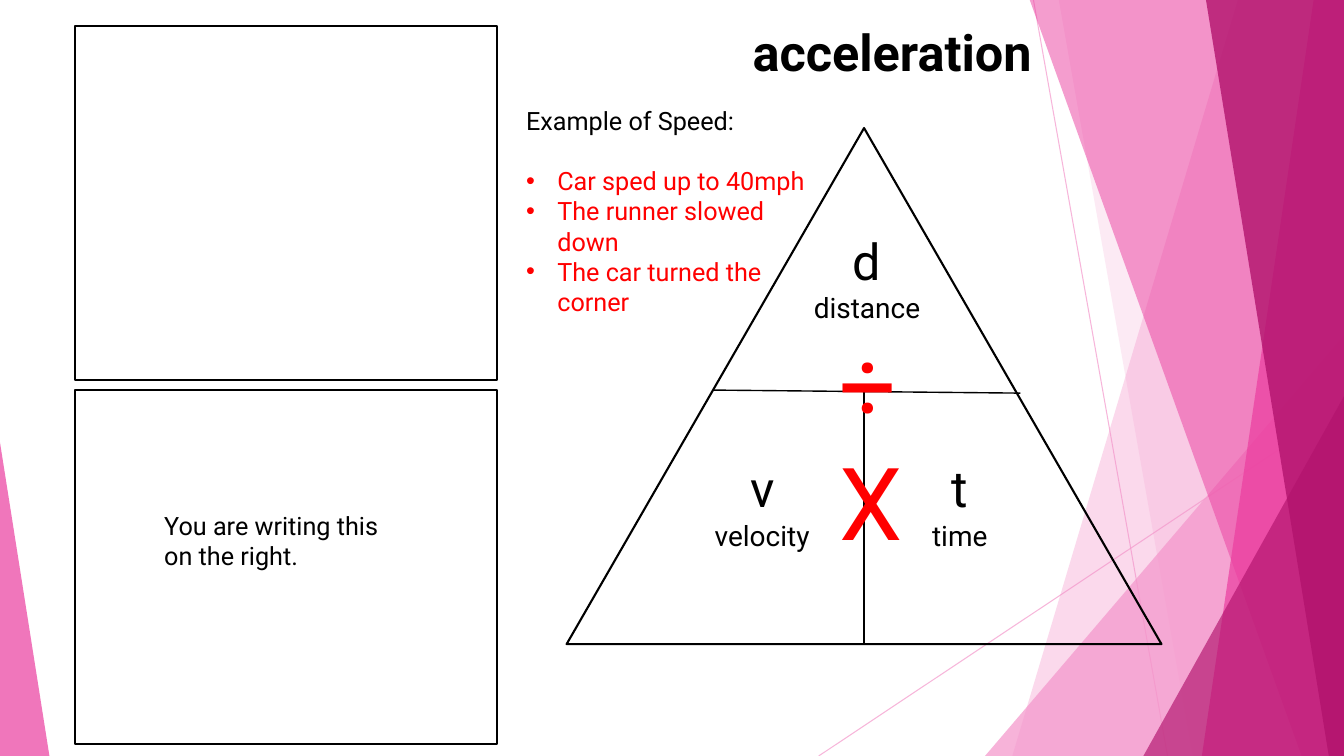
import pptx
import pptx.dml.color
import pptx.enum.shapes
import pptx.enum.text
import pptx.oxml
import pptx.oxml.ns
import pptx.util
import lxml.etree

Inches = pptx.util.Inches
Pt = pptx.util.Pt
RGB = pptx.dml.color.RGBColor.from_string
qn = pptx.oxml.ns.qn
SHAPES = pptx.enum.shapes.MSO_SHAPE
ALIGN = pptx.enum.text.PP_ALIGN

COLORS = {
    "black": "000000",
    "red": "FF0000",
    "light": "F496CB",
    "pink": "EB3D9F",
    "plum": "B2136D",
}
WIDTH, HEIGHT = 13.33, 7.5

deck = pptx.Presentation()
deck.slide_width = Inches(WIDTH)
deck.slide_height = Inches(HEIGHT)
page = deck.slides.add_slide(deck.slide_layouts[6])


def fade(fill, name, opacity):
    fill.solid()
    fill.fore_color.rgb = RGB(COLORS[name])
    color = next(fill._xPr.iter(qn("a:srgbClr")))
    lxml.etree.SubElement(color, qn("a:alpha"), val=str(opacity * 1000))


def draw_line(start, end, name, width, opacity):
    line = page.shapes.add_connector(
        pptx.enum.shapes.MSO_CONNECTOR.STRAIGHT,
        *[Inches(value) for value in start + end],
    )
    line.line.width = Pt(width)
    fade(line.line.fill, name, opacity)
    lxml.etree.SubElement(line._element.spPr, qn("a:effectLst"))


draw_line((10.25, 0), (11.58, HEIGHT), "light", 0.75, 70)
draw_line((WIDTH, 4.03), (8.12, HEIGHT), "light", 0.75, 70)

facets = [
    ("band", (12.28, 10.04), "light", 36),
    ("band", (10.5, 11.83), "light", 20),
    ("triangle", (9.77, 3.33, WIDTH, 1), "light", 72),
    ("band", (10.21, 12.91), "pink", 50),
    ("band", (13.03, 11.92), "pink", 70),
    ("band", (11.96, 13.18), "plum", 80),
    ("triangle", (11.34, 3.93, WIDTH, 1), "plum", 66),
    ("triangle", (0, 4.39, 0.49, 0), "pink", 70),
]
for kind, geometry, name, opacity in facets:
    if kind == "band":
        upper, lower = geometry
        outline = page.shapes.build_freeform(Inches(upper), Inches(-0.01))
        corners = [(WIDTH, -0.01), (WIDTH, HEIGHT), (lower, HEIGHT)]
        outline.add_line_segments([(Inches(x), Inches(y)) for x, y in corners])
        facet = outline.convert_to_shape()
    else:
        left, top, right, apex = geometry
        facet = page.shapes.add_shape(
            SHAPES.ISOSCELES_TRIANGLE,
            Inches(left), Inches(top), Inches(right - left), Inches(HEIGHT - top),
        )
        facet.adjustments[0] = apex
    facet.shadow.inherit = False
    facet.line.fill.background()
    fade(facet.fill, name, opacity)

frames = [
    (SHAPES.RECTANGLE, 0.74, 0.26, 4.19, 3.51),
    (SHAPES.RECTANGLE, 0.74, 3.87, 4.19, 3.51),
    (SHAPES.ISOSCELES_TRIANGLE, 5.62, 1.27, 5.9, 5.12),
]
for preset, *bounds in frames:
    frame = page.shapes.add_shape(preset, *[Inches(value) for value in bounds])
    frame.shadow.inherit = False
    frame.fill.background()
    frame.line.color.rgb = RGB(COLORS["black"])
    frame.line.width = Pt(1.5)

draw_line((7.07, 3.87), (10.12, 3.9), "black", 1, 100)
draw_line((8.57, 3.87), (8.57, 6.4), "black", 1, 100)

examples = ["Car sped up to 40mph", "The runner slowed down", "The car turned the corner"]
texts = [((6.63, 0.16, 4.44, 0.71), ALIGN.CENTER, [("acceleration", 36, "black")])]
for left, top, symbol, quantity in [
    (7.93, 2.23, "d", "distance"),
    (6.89, 4.49, "v", "velocity"),
    (8.85, 4.49, "t", "time"),
]:
    lines = [(symbol, 36, "black"), (quantity, 20, "black")]
    texts.append(((left, top, 1.34, 1.04), ALIGN.CENTER, lines))
for top, operator in [(3.14, "÷"), (4.31, "X")]:
    texts.append(((8.23, top, 0.83, 1.31), ALIGN.LEFT, [(operator, 72, "red")]))
texts += [
    (
        (5.12, 1, 3.1, 2.22),
        ALIGN.LEFT,
        [("Example of Speed:", 18, "black")] + [(example, 18, "red") for example in examples],
    ),
    ((1.53, 5.01, 2.62, 0.71), ALIGN.LEFT, [("You are writing this on the right.", 18, "black")]),
]
for bounds, alignment, lines in texts:
    box = page.shapes.add_textbox(*[Inches(value) for value in bounds])
    box.text_frame.word_wrap = True
    for index, (words, size, name) in enumerate(lines):
        para = box.text_frame.paragraphs[0] if index == 0 else box.text_frame.add_paragraph()
        para.alignment = alignment
        span = para.add_run()
        span.text = words
        span.font.name = "Roboto"
        span.font.size = Pt(size)
        span.font.bold = words == "acceleration"
        span.font.color.rgb = RGB(COLORS[name])
        if words == "Example of Speed:":
            para.space_after = Pt(21)
        if words in examples:
            settings = para._p.get_or_add_pPr()
            settings.set("marL", str(Inches(0.31)))
            settings.set("indent", str(Inches(-0.31)))
            lxml.etree.SubElement(settings, qn("a:buFont"), typeface="Arial")
            lxml.etree.SubElement(settings, qn("a:buChar"), char="•")

deck.save("out.pptx")
